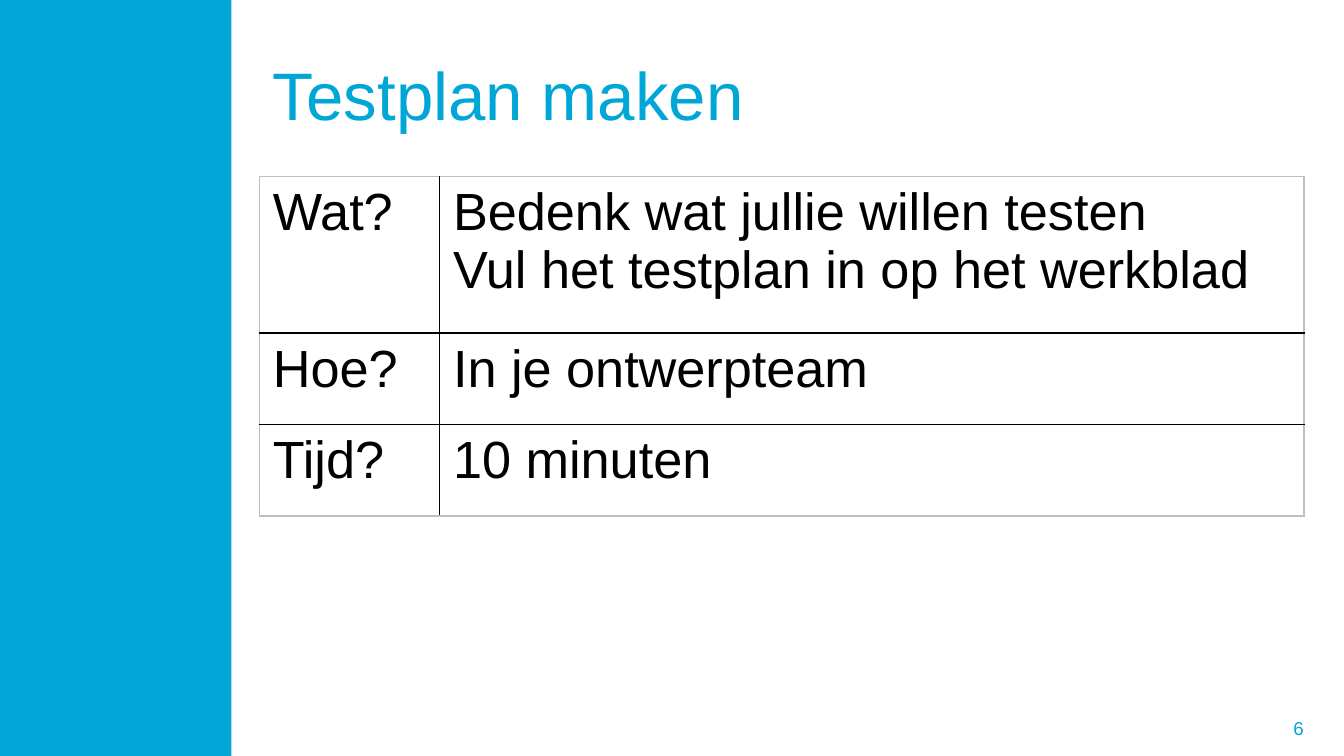
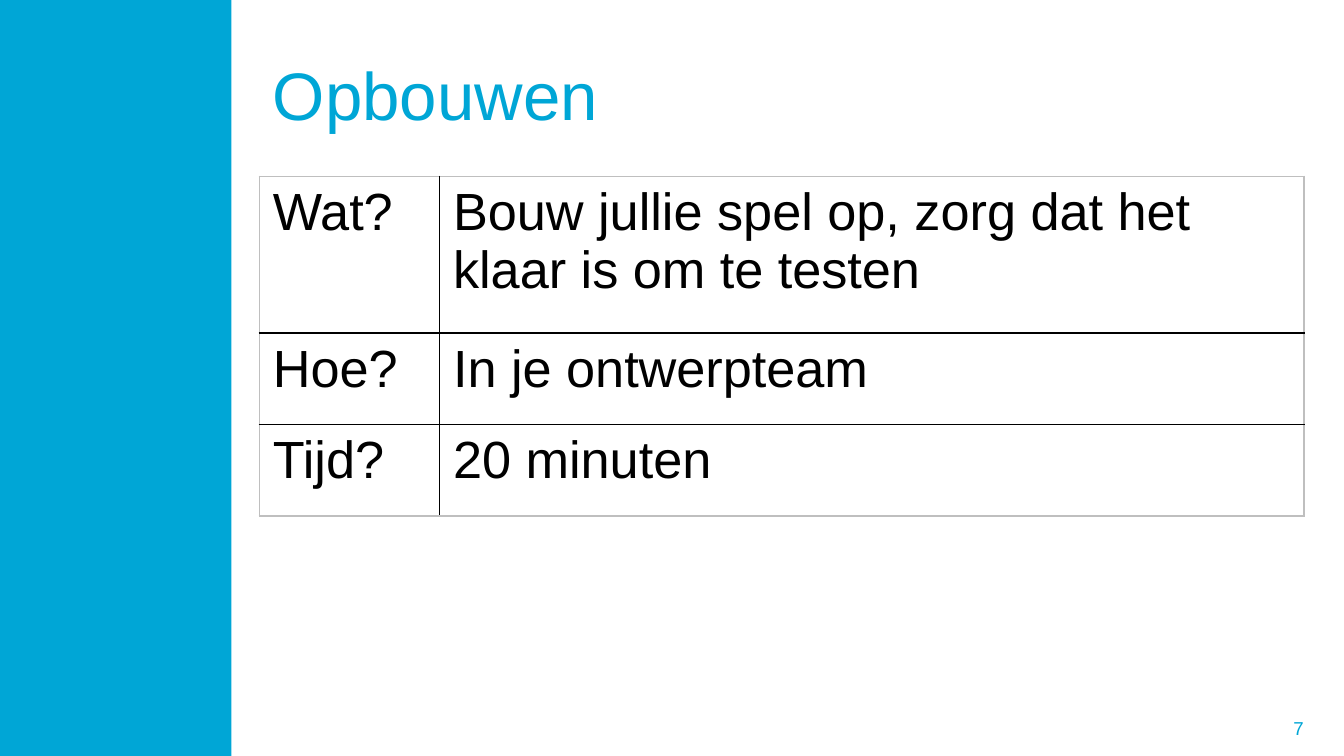
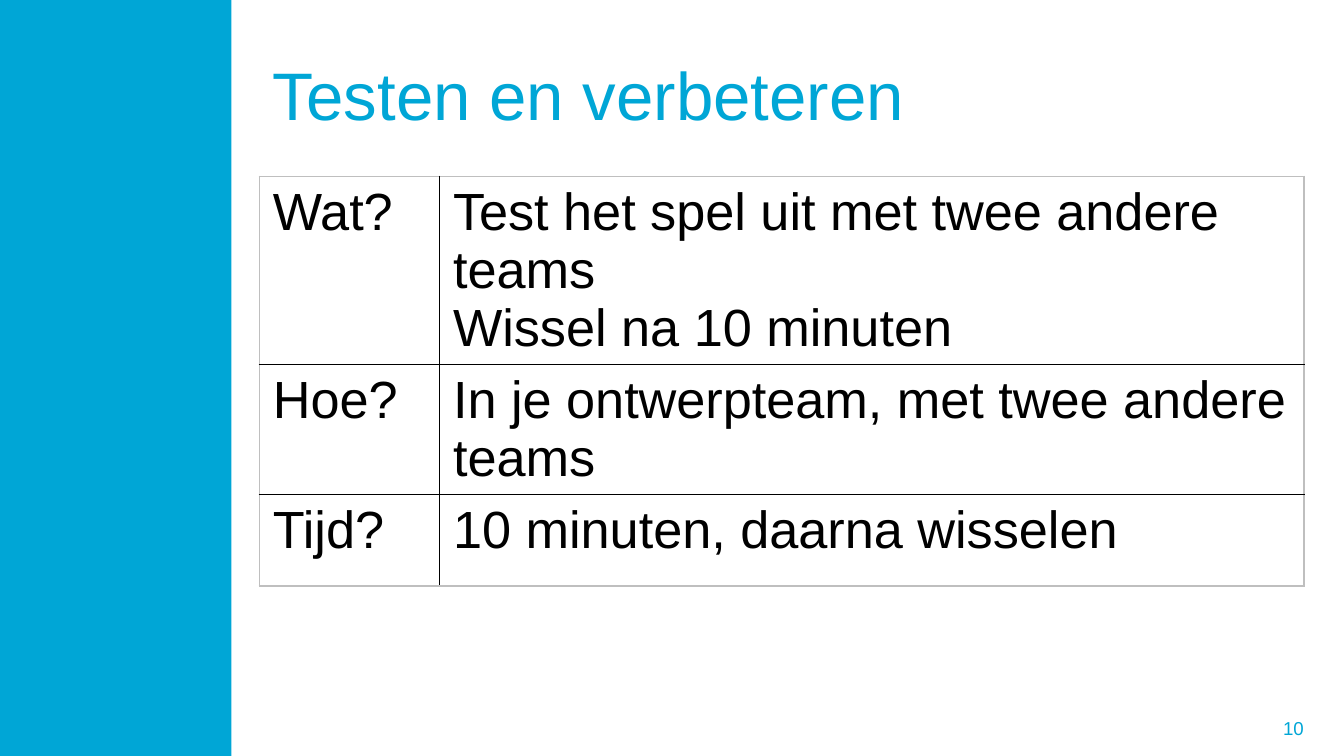
from dataclasses import dataclass

from lxml import etree
from pptx import Presentation
from pptx.dml.color import RGBColor
from pptx.enum import shapes, text
from pptx.oxml.ns import qn
from pptx.util import Pt


@dataclass(frozen=True)
class Theme:
    font: str = "Arial"
    accent: str = "00A6D6"
    ink: str = "000000"
    frame: str = "BFBFBF"
    title_size: float = 36
    table_size: float = 28
    number_size: float = 10
    border: float = 1


@dataclass(frozen=True)
class Box:
    left: float
    top: float
    width: float
    height: float

    def points(self) -> tuple:
        return Pt(self.left), Pt(self.top), Pt(self.width), Pt(self.height)


@dataclass(frozen=True)
class Assignment:
    number: int
    title: str
    what: tuple[str, ...]
    how: str
    time: str

    def rows(self) -> list:
        return [(("Wat?",), self.what), (("Hoe?",), (self.how,)), (("Tijd?",), (self.time,))]


THEME = Theme()
SLIDE_W, SLIDE_H = 720, 405
COL_WIDTHS = (96.5, 463)
ROW_HEIGHTS = (84, 49, 49)
BAND = Box(0, 0, 124, SLIDE_H)
TITLE = Box(139, 16.5, sum(COL_WIDTHS), 67.5)
TABLE = Box(139, 94.5, sum(COL_WIDTHS), sum(ROW_HEIGHTS))
NUMBER = Box(523.5, 379.5, 182, 21.5)

ASSIGNMENTS = (
    Assignment(6, "Testplan maken",
               ("Bedenk wat jullie willen testen", "Vul het testplan in op het werkblad"),
               "In je ontwerpteam", "10 minuten"),
    Assignment(7, "Opbouwen",
               ("Bouw jullie spel op, zorg dat het klaar is om te testen",),
               "In je ontwerpteam", "20 minuten"),
    Assignment(10, "Testen en verbeteren",
               ("Test het spel uit met twee andere teams", "Wissel na 10 minuten"),
               "In je ontwerpteam, met twee andere teams", "10 minuten, daarna wisselen"),
)


def write(tf, lines: tuple[str, ...], size: float, color: str,
          align=text.PP_ALIGN.LEFT) -> None:
    tf.text = "\n".join(lines)
    for p in tf.paragraphs:
        p.alignment = align
        for r in p.runs:
            for name, value in {"name": THEME.font, "size": Pt(size), "bold": False}.items():
                setattr(r.font, name, value)
            r.font.color.rgb = RGBColor.from_string(color)


def format_frame(tf) -> None:
    values = {
        "word_wrap": True,
        "auto_size": text.MSO_AUTO_SIZE.NONE,
        "vertical_anchor": text.MSO_ANCHOR.MIDDLE,
    }
    for name, value in values.items():
        setattr(tf, name, value)


def add_band(s) -> None:
    sp = s.shapes.add_shape(shapes.MSO_SHAPE.RECTANGLE, *BAND.points())
    sp.shadow.inherit = False
    sp.fill.solid()
    sp.fill.fore_color.rgb = RGBColor.from_string(THEME.accent)
    sp.line.fill.background()


def add_title(s, title: str) -> None:
    sp = s.shapes.title
    for name, value in zip(("left", "top", "width", "height"), TITLE.points()):
        setattr(sp, name, value)
    format_frame(sp.text_frame)
    write(sp.text_frame, (title,), THEME.title_size, THEME.accent)


def add_number(s, number: int) -> None:
    tf = s.shapes.add_textbox(*NUMBER.points()).text_frame
    format_frame(tf)
    write(tf, (str(number),), THEME.number_size, THEME.accent, text.PP_ALIGN.RIGHT)


def set_borders(cell, colors: dict[str, str]) -> None:
    """Draw cell borders; colors maps a side (L, R, T, B) to its colour."""
    tc_pr = cell._tc.get_or_add_tcPr()
    for side, color in colors.items():
        ln = etree.SubElement(tc_pr, qn(f"a:ln{side}"), w=str(Pt(THEME.border)))
        fill = etree.SubElement(ln, qn("a:solidFill"))
        etree.SubElement(fill, qn("a:srgbClr"), val=color)


def add_assignment_table(s, rows: list) -> None:
    last_row, last_col = len(ROW_HEIGHTS) - 1, len(COL_WIDTHS) - 1
    table = s.shapes.add_table(len(ROW_HEIGHTS), len(COL_WIDTHS), *TABLE.points()).table
    table.first_row = table.horz_banding = False
    for col, width in zip(table.columns, COL_WIDTHS):
        col.width = Pt(width)
    for row, height in zip(table.rows, ROW_HEIGHTS):
        row.height = Pt(height)
    for i, row in enumerate(rows):
        for j, lines in enumerate(row):
            cell = table.cell(i, j)
            write(cell.text_frame, lines, THEME.table_size, THEME.ink)
            outer = {"L": j == 0, "R": j == last_col, "T": i == 0, "B": i == last_row}
            set_borders(cell, {side: THEME.frame if edge else THEME.ink
                               for side, edge in outer.items()})
            cell.fill.background()


def main() -> None:
    prs = Presentation()
    prs.slide_width, prs.slide_height = Pt(SLIDE_W), Pt(SLIDE_H)
    title_only = prs.slide_layouts[5]
    for assignment in ASSIGNMENTS:
        s = prs.slides.add_slide(title_only)
        add_number(s, assignment.number)
        add_band(s)
        add_title(s, assignment.title)
        add_assignment_table(s, assignment.rows())
    prs.save("out.pptx")


if __name__ == "__main__":
    main()
